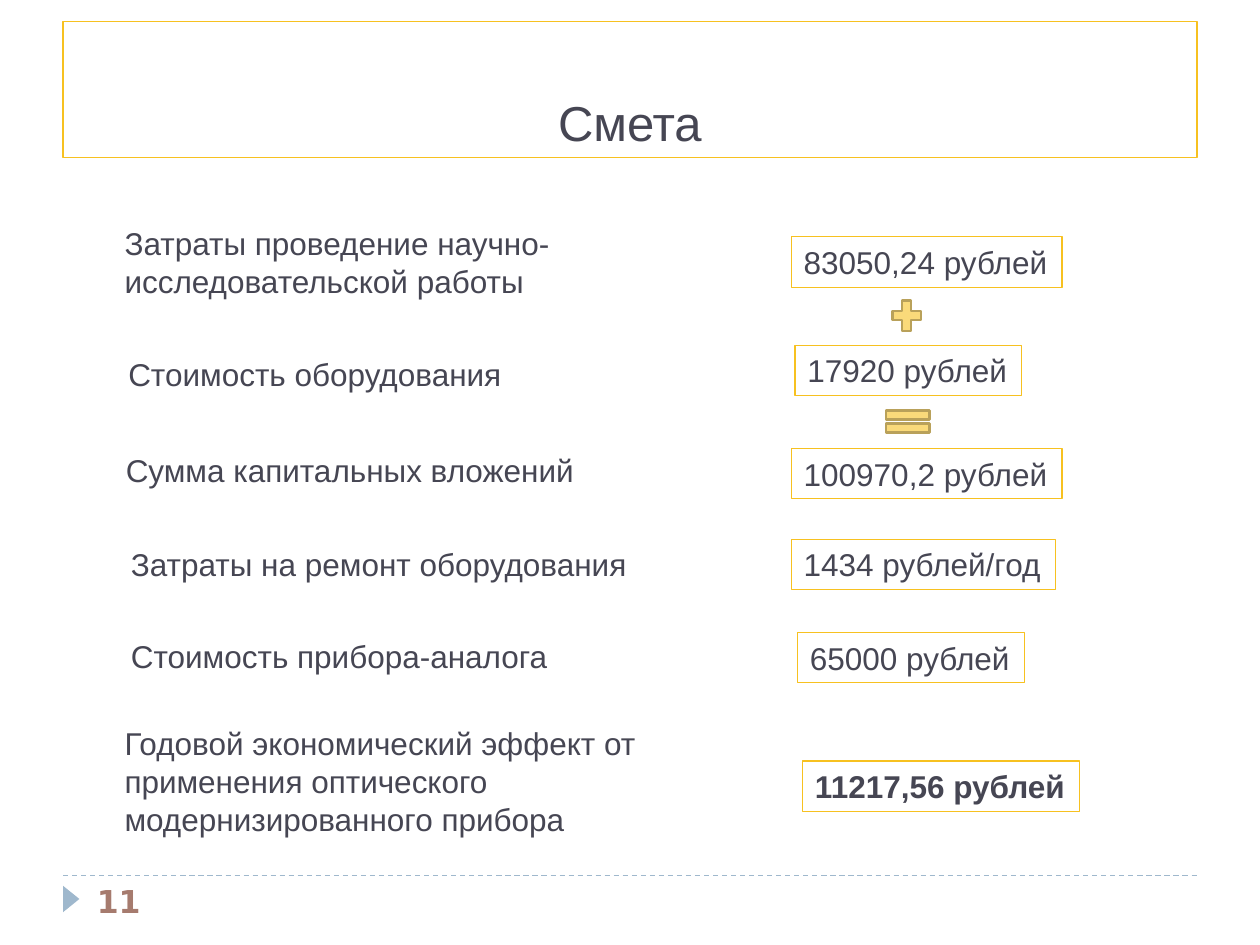
from lxml import etree
from pptx import Presentation
from pptx import util as u
from pptx.dml.color import RGBColor
from pptx.enum import dml, shapes, text
from pptx.oxml.ns import qn

INK = RGBColor(0x46, 0x46, 0x53)
GOLD = RGBColor(0xF7, 0xC1, 0x20)
PALE_GOLD = RGBColor(0xFA, 0xDA, 0x7A)
DARK_GOLD = RGBColor(0xB9, 0xA1, 0x5A)
BLUE = RGBColor(0x9F, 0xB8, 0xCD)
BROWN = RGBColor(0xA6, 0x7B, 0x6E)

LABELS = [
    (8.9, 17.3, 50, 7.1, True, "Затраты проведение научно-исследовательской работы"),
    (9.2, 27.7, 50, 4, True, "Стоимость оборудования"),
    (9, 35.3, 38, 4, False, "Сумма капитальных вложений"),
    (9.4, 42.8, 43.9, 4, False, "Затраты на ремонт оборудования"),
    (9.4, 50.1, 50, 4, True, "Стоимость прибора-аналога"),
    (8.9, 57, 50, 10.1, True,
     "Годовой экономический эффект от применения оптического модернизированного прибора"),
]
AMOUNTS = [
    (62.8, 18.8, 21.5, "83050,24 рублей", False),
    (63.1, 27.4, 18, "17920 рублей", False),
    (62.8, 35.6, 21.5, "100970,2 рублей", False),
    (62.8, 42.8, 21, "1434 рублей/год", False),
    (63.3, 50.2, 18, "65000 рублей", False),
    (63.7, 60.4, 22, "11217,56 рублей", True),
]


class EstimateSlide:
    """Draws styled elements on a slide divided into 100 columns and 75 rows."""

    COLUMNS, ROWS = 100, 75
    FONT = {"name": "Arial", "size": u.Pt(18), "bold": False}

    def __init__(self, presentation):
        self.slide = presentation.slides.add_slide(presentation.slide_layouts[6])
        self.column = presentation.slide_width / self.COLUMNS
        self.row = presentation.slide_height / self.ROWS

    def place(self, x, y, width, height):
        return (round(x * self.column), round(y * self.row),
                round(width * self.column), round(height * self.row))

    def label(self, place, words, wrap=True, color=INK, border=None,
              anchor=text.MSO_ANCHOR.TOP, align=text.PP_ALIGN.LEFT, **font):
        shape = self.slide.shapes.add_textbox(*self.place(*place))
        frame = shape.text_frame
        frame.word_wrap, frame.vertical_anchor = wrap, anchor
        if border is not None:
            shape.line.color.rgb = border
            shape.line.width = u.Pt(0.75)
        paragraph = frame.paragraphs[0]
        paragraph.alignment = align
        run = paragraph.add_run()
        run.text = words
        for name, value in {**self.FONT, **font}.items():
            setattr(run.font, name, value)
        run.font.color.rgb = color

    def symbol(self, kind, place, fill, border=None, rotation=0):
        shape = self.slide.shapes.add_shape(kind, *self.place(*place))
        shape.shadow.inherit = False
        shape.rotation = rotation
        shape.fill.solid()
        shape.fill.fore_color.rgb = fill
        if border is None:
            shape.line.fill.background()
        else:
            shape.line.color.rgb = border
            shape.line.width = u.Pt(1.5)

    def rule(self, x, y, width):
        left, top, length, _ = self.place(x, y, width, 0)
        line = self.slide.shapes.add_connector(
            shapes.MSO_CONNECTOR.STRAIGHT, left, top, left + length, top)
        line.line.color.rgb = BLUE
        line.line.width = u.Pt(0.75)
        line.line.dash_style = dml.MSO_LINE.DASH
        etree.SubElement(line._element.spPr, qn("a:effectLst"))


def main():
    presentation = Presentation()
    presentation.slide_width, presentation.slide_height = u.Inches(10), u.Inches(7.5)
    estimate = EstimateSlide(presentation)
    kinds = shapes.MSO_SHAPE

    for y in (69.5, 12.5):
        estimate.rule(5, y, 90)
    estimate.symbol(kinds.ISOSCELES_TRIANGLE, (4.6, 70.7, 2.1, 1.3), BLUE, rotation=90)
    estimate.label((5, 1.7, 90, 10.8), "Смета", border=GOLD, size=u.Pt(28),
                   anchor=text.MSO_ANCHOR.BOTTOM, align=text.PP_ALIGN.CENTER)
    estimate.label((6.7, 69.5, 21.7, 4), "11", color=BROWN, name="DejaVu Sans", bold=True)

    for *place, wrap, words in LABELS:
        estimate.label(place, words, wrap)
    for x, y, width, words, bold in AMOUNTS:
        estimate.label((x, y, width, 4), words, wrap=False, border=GOLD, bold=bold)

    estimate.symbol(kinds.MATH_PLUS, (70.4, 23.4, 3.1, 3.3), PALE_GOLD, DARK_GOLD)
    estimate.symbol(kinds.MATH_EQUAL, (69.7, 32, 4.7, 2.9), PALE_GOLD, DARK_GOLD)
    presentation.save("out.pptx")


if __name__ == "__main__":
    main()
